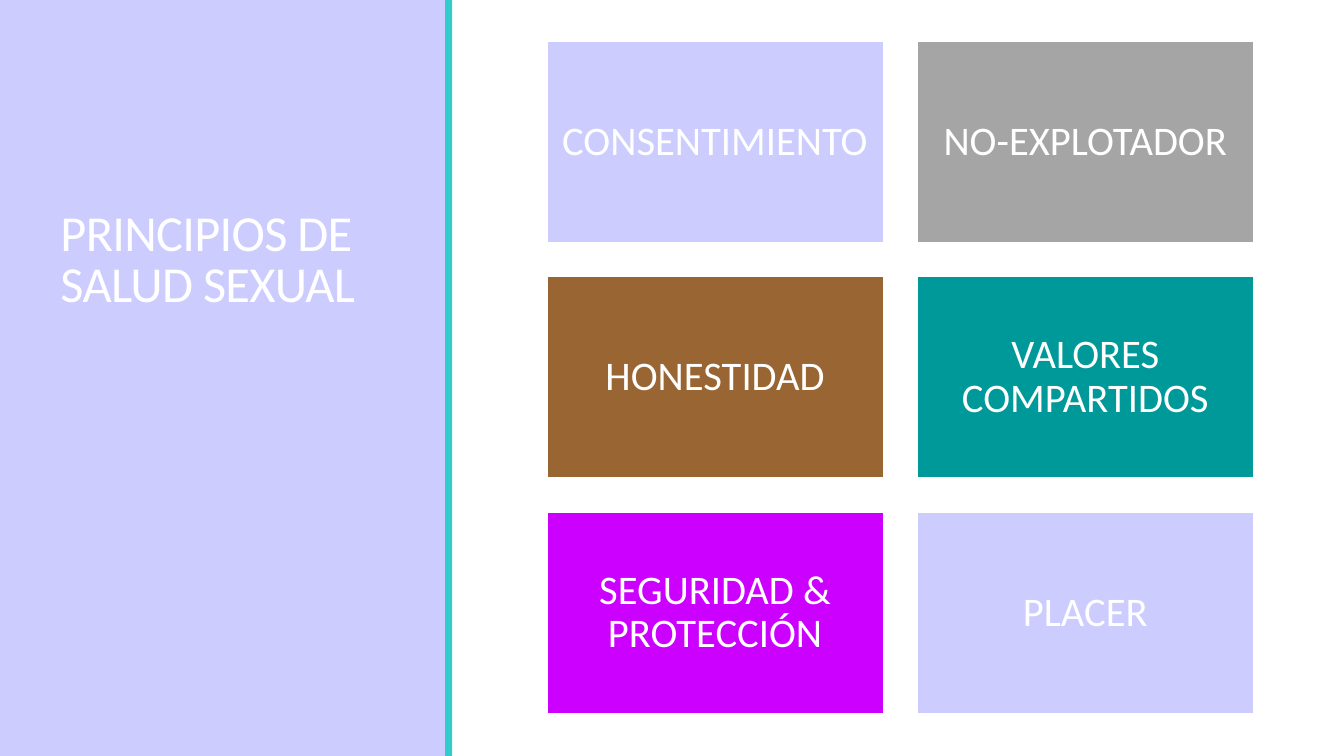
import pptx
import pptx.util
import pptx.dml.color
import pptx.enum.shapes
import pptx.enum.text

Pt = pptx.util.Pt
ANCHOR = pptx.enum.text.MSO_ANCHOR
ALIGN = pptx.enum.text.PP_ALIGN

COLORS = {
    "white": "FFFFFF",
    "lavender": "CCCCFF",
    "turquoise": "33CCCC",
    "gray": "A5A5A5",
    "brown": "996633",
    "teal": "009999",
    "magenta": "CC00FF",
}

PRINCIPLES = [
    ("CONSENTIMIENTO", "lavender"),
    ("NO-EXPLOTADOR", "gray"),
    ("HONESTIDAD", "brown"),
    ("VALORES COMPARTIDOS", "teal"),
    ("SEGURIDAD & PROTECCIÓN", "magenta"),
    ("PLACER", "lavender"),
]


def rgb(name):
    """Return the named colour as an RGBColor."""
    return pptx.dml.color.RGBColor.from_string(COLORS[name])


def write(sp, text, size, align, anchor, line_spacing, inset=None, spacing=None):
    """Put formatted white text in a shape."""
    tf = sp.text_frame
    tf.word_wrap = True
    tf.auto_size = pptx.enum.text.MSO_AUTO_SIZE.NONE
    tf.vertical_anchor = anchor
    if inset is not None:
        tf.margin_left = tf.margin_right = Pt(inset)
        tf.margin_top = tf.margin_bottom = Pt(inset)
    p = tf.paragraphs[0]
    p.alignment = align
    p.line_spacing = line_spacing
    r = p.add_run()
    r.text = text
    r.font.name = "Calibri"
    r.font.size = Pt(size)
    r.font.color.rgb = rgb("white")
    if spacing is not None:
        r.font._element.set("spc", str(int(spacing * 100)))


def add_rect(s, left, top, width, height, fill, line=None):
    """Add a flat rectangle with an optional outline colour."""
    sp = s.shapes.add_shape(
        pptx.enum.shapes.MSO_SHAPE.RECTANGLE,
        Pt(left), Pt(top), Pt(width), Pt(height))
    sp.shadow.inherit = False
    sp.fill.solid()
    sp.fill.fore_color.rgb = rgb(fill)
    if line:
        sp.line.color.rgb = rgb(line)
        sp.line.width = Pt(1.25)
    else:
        sp.line.fill.background()
    return sp


def add_title_panel(s, left, top, width, height):
    """Draw the side panel with its stripe and the slide title."""
    stripe = 5
    add_rect(s, left, top, width - stripe, height, "lavender")
    add_rect(s, left + width - stripe, top, stripe, height, "turquoise")
    title = s.shapes.title
    title.left, title.top = Pt(left + 36), Pt(top + 47)
    title.width, title.height = Pt(252), Pt(180)
    write(title, "PRINCIPIOS DE SALUD SEXUAL", 36, ALIGN.LEFT, ANCHOR.BOTTOM,
          0.85, spacing=-0.5)
    s.shapes.element.append(title.element)


def add_principles(s, left, top, width, height, cols=2, gap=24):
    """Fill the box with an even grid of labelled tiles."""
    rows = len(PRINCIPLES) // cols
    w = (width - gap * (cols - 1)) / cols
    h = (height - gap * (rows - 1)) / rows
    for i, (label, fill) in enumerate(PRINCIPLES):
        row, col = divmod(i, cols)
        sp = add_rect(s, left + col * (w + gap), top + row * (h + gap), w, h,
                      fill, "white")
        write(sp, label, 29, ALIGN.CENTER, ANCHOR.MIDDLE, 0.9, inset=8.7)


def main():
    """Build and save the slide."""
    prs = pptx.Presentation()
    prs.slide_width, prs.slide_height = Pt(960), Pt(540)
    s = prs.slides.add_slide(prs.slide_layouts[5])
    add_title_panel(s, 0, 0, 323, 540)
    add_principles(s, 390.6, 29.4, 505, 480.5)
    prs.save("out.pptx")


if __name__ == "__main__":
    main()
